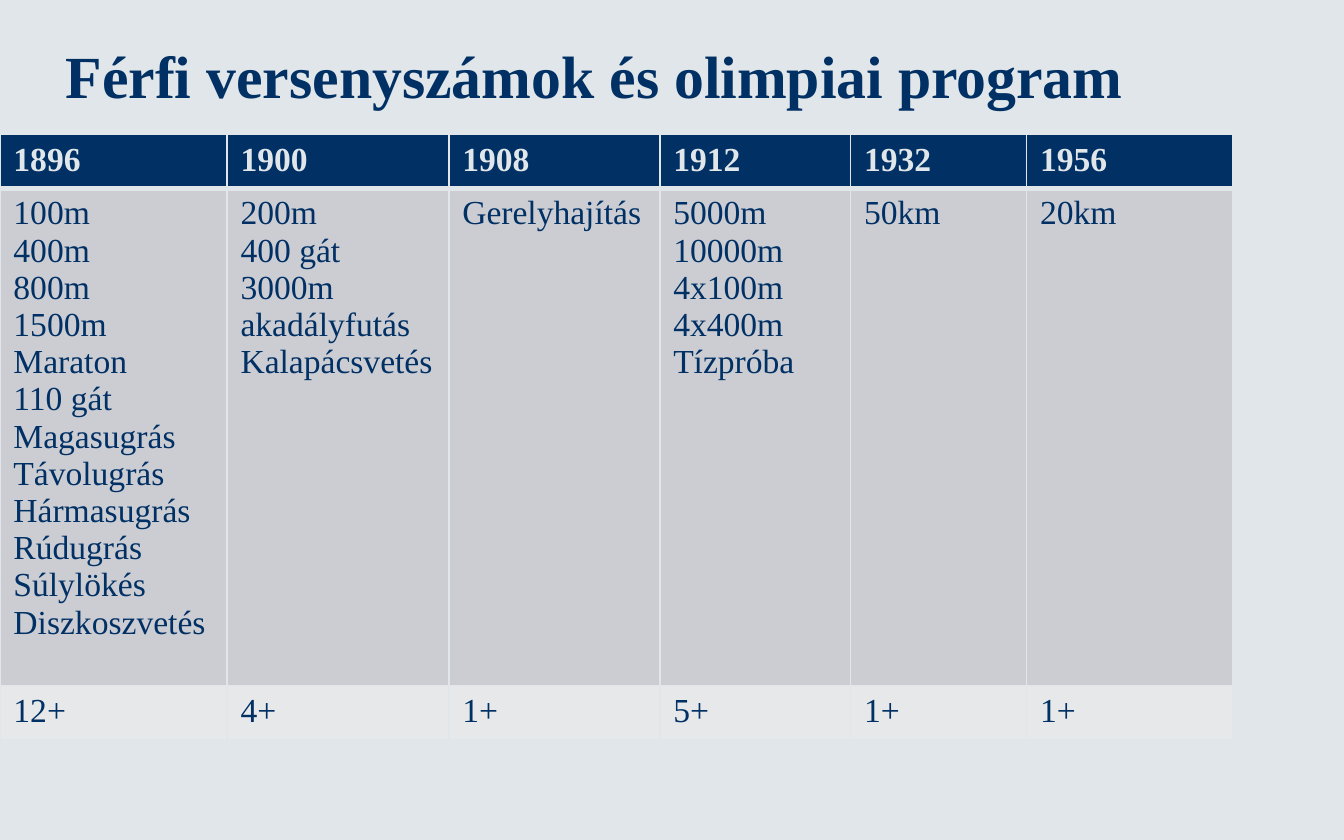
from lxml.etree import SubElement
from pptx import Presentation
from pptx.dml.color import RGBColor
from pptx.enum.text import MSO_ANCHOR
from pptx.oxml.ns import qn
from pptx.util import Inches, Pt

COLORS = {"background": "E0E6E9", "navy": "003064", "events": "CCCDD3", "totals": "E7E8EA"}
FONT = "Times New Roman"
EVENTS_BY_YEAR = {
    "1896": ["100m", "400m", "800m", "1500m", "Maraton", "110 gát", "Magasugrás", "Távolugrás",
             "Hármasugrás", "Rúdugrás", "Súlylökés", "Diszkoszvetés"],
    "1900": ["200m", "400 gát", "3000m akadályfutás", "Kalapácsvetés"],
    "1908": ["Gerelyhajítás"],
    "1912": ["5000m", "10000m", "4x100m", "4x400m", "Tízpróba"],
    "1932": ["50km"],
    "1956": ["20km"],
}
YEAR_WIDTHS = [1.69, 1.65, 1.57, 1.42, 1.31, 1.53]
ROW_HEIGHTS = [0.37, 3.19, 0.38]
ROW_STYLES = [("navy", "background", True), ("events", "navy", False), ("totals", "navy", False)]


class OlympicSlide:
    """Holds the slide and its style, and adds the title and the programme table."""

    def __init__(self, slide):
        self.slide = slide
        background = slide.background.fill
        background.solid()
        background.fore_color.rgb = self.color("background")

    def color(self, name):
        return RGBColor.from_string(COLORS[name])

    def set_text(self, frame, text, size, color, bold):
        frame.text = text
        for paragraph in frame.paragraphs:
            for run in paragraph.runs:
                run.font.name = FONT
                run.font.size = Pt(size)
                run.font.bold = bold
                run.font.color.rgb = self.color(color)

    def title(self, text, left, top, width, height):
        heading = self.slide.shapes.add_textbox(
            Inches(left), Inches(top), Inches(width), Inches(height)).text_frame
        heading.word_wrap = True
        heading.vertical_anchor = MSO_ANCHOR.TOP
        heading.margin_top, heading.margin_bottom = Inches(0.03), 0
        self.set_text(heading, text, 32, "navy", True)

    def borders(self, cell, widths):
        properties = cell._tc.get_or_add_tcPr()
        for position, (side, width) in enumerate(widths.items()):
            line = properties.makeelement(qn(f"a:{side}"), {"w": str(Pt(width))})
            fill = SubElement(line, qn("a:solidFill"))
            SubElement(fill, qn("a:srgbClr"), val=COLORS["background"])
            properties.insert(position, line)

    def table(self, rows, left, top):
        programme = self.slide.shapes.add_table(
            len(rows), len(YEAR_WIDTHS), Inches(left), Inches(top),
            Inches(sum(YEAR_WIDTHS)), Inches(sum(ROW_HEIGHTS))).table
        for column, width in zip(programme.columns, YEAR_WIDTHS):
            column.width = Inches(width)
        for index, (texts, height, style) in enumerate(zip(rows, ROW_HEIGHTS, ROW_STYLES)):
            programme.rows[index].height = Inches(height)
            fill, ink, bold = style
            for year, text in enumerate(texts):
                cell = programme.cell(index, year)
                cell.fill.solid()
                cell.fill.fore_color.rgb = self.color(fill)
                self.set_text(cell.text_frame, text, 18, ink, bold)
                self.borders(cell, {"lnL": 1, "lnR": 1, "lnT": 3 if index == 1 else 1,
                                    "lnB": 3 if index == 0 else 1})


def main():
    presentation = Presentation()
    presentation.slide_width, presentation.slide_height = Inches(10), Inches(6.25)
    olympics = OlympicSlide(presentation.slides.add_slide(presentation.slide_layouts[6]))
    olympics.title("Férfi versenyszámok és olimpiai program", 0.39, 0.26, 8.74, 0.47)
    events = EVENTS_BY_YEAR.values()
    totals = [f"{len(names)}+" for names in events]
    olympics.table([list(EVENTS_BY_YEAR), ["\n".join(names) for names in events], totals], 0, 1)
    presentation.save("out.pptx")


if __name__ == "__main__":
    main()
